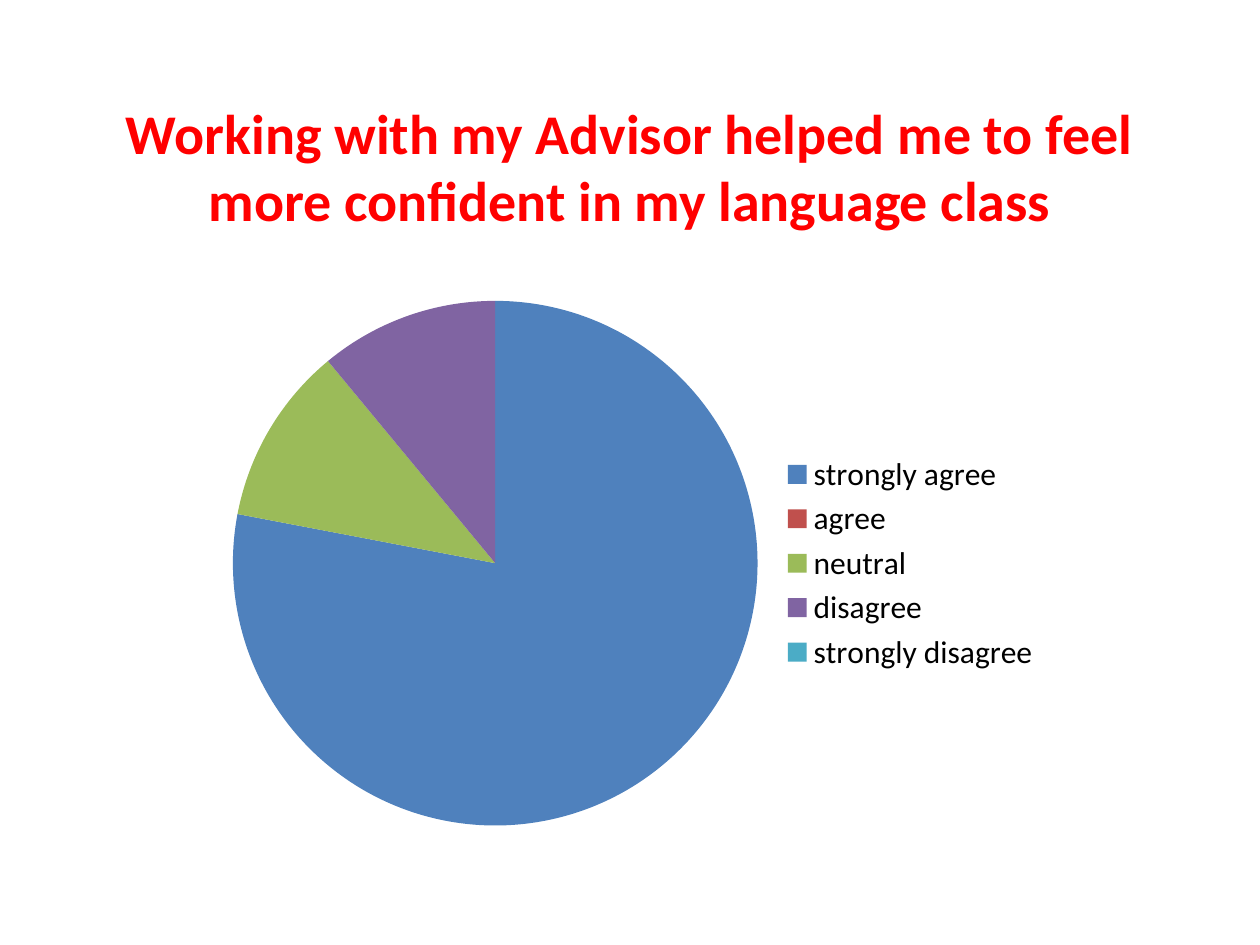
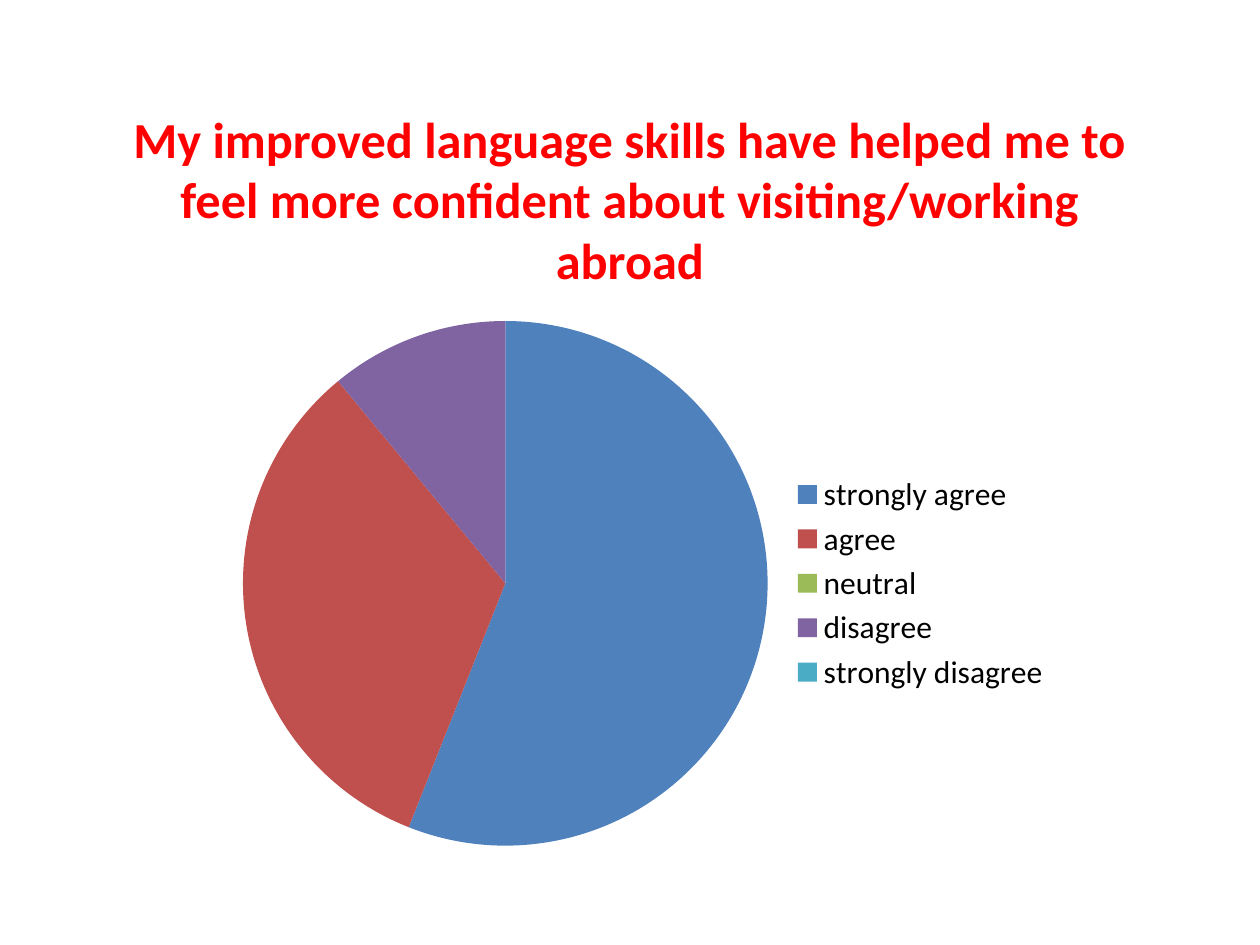
from dataclasses import dataclass

import pptx
import pptx.chart.data
import pptx.dml.color
import pptx.enum.chart
import pptx.enum.text
import pptx.util


@dataclass(frozen=True)
class Theme:
    font: str = "Calibri"
    title_color: str = "FF0000"
    text_color: str = "000000"
    background: str = "FFFFFF"
    slices: tuple = ("4F81BD", "C0504D", "9BBB59", "8064A2", "4BACC6")
    legend_size: float = 18


@dataclass(frozen=True)
class Box:
    """A region in inches."""
    left: float
    top: float
    width: float
    height: float

    def share(self, left, top, width, height):
        """Return the region covering the given shares of this one."""
        return Box(self.left + left * self.width, self.top + top * self.height,
                   width * self.width, height * self.height)

    def lengths(self):
        return [pptx.util.Inches(length) for length in
                (self.left, self.top, self.width, self.height)]


THEME = Theme()
PAGE = Box(0, 0, 10, 7.5)
ANSWERS = ("strongly agree", "agree", "neutral", "disagree", "strongly disagree")
QUESTIONS = (
    dict(question="Working with my Advisor helped me to feel more confident "
                  "in my language class",
         size=32, values=(78, 0, 11, 11, 0),
         title_box=PAGE.share(0.075, 0.08, 0.85, 0.19),
         chart_corner=(1.69, 2.25)),
    dict(question="My improved language skills have helped me to feel more "
                  "confident about visiting/working abroad",
         size=28.8, values=(56, 33, 0, 11, 0),
         title_box=PAGE.share(0.075, 0.11, 0.85, 0.2),
         chart_corner=(1.77, 2.41)),
)
CHART_SIZE = (6.67, 4.44)


def rgb(code):
    return pptx.dml.color.RGBColor.from_string(code)


def style_font(font, size, color, bold=False):
    font.name = THEME.font
    font.size = pptx.util.Pt(size)
    font.bold = bold
    font.color.rgb = rgb(color)


def place_title(page, box, question, size):
    title = page.shapes.title
    title.left, title.top, title.width, title.height = box.lengths()
    frame = title.text_frame
    frame.word_wrap = True
    frame.auto_size = pptx.enum.text.MSO_AUTO_SIZE.NONE
    frame.vertical_anchor = pptx.enum.text.MSO_ANCHOR.MIDDLE
    para = frame.paragraphs[0]
    para.alignment = pptx.enum.text.PP_ALIGN.CENTER
    span = para.add_run()
    span.text = question
    style_font(span.font, size, THEME.title_color, bold=True)


def place_pie(page, box, values):
    answers = pptx.chart.data.CategoryChartData()
    answers.categories = ANSWERS
    answers.add_series("Series 1", values)
    chart = page.shapes.add_chart(
        pptx.enum.chart.XL_CHART_TYPE.PIE, *box.lengths(), answers).chart
    style_font(chart.font, THEME.legend_size, THEME.text_color)
    chart.has_title = False
    chart.has_legend = True
    chart.legend.position = pptx.enum.chart.XL_LEGEND_POSITION.RIGHT
    chart.legend.include_in_layout = False
    plot = chart.plots[0]
    plot.vary_by_categories = True
    for index, color in enumerate(THEME.slices):
        fill = plot.series[0].points[index].format.fill
        fill.solid()
        fill.fore_color.rgb = rgb(color)


def add_question_page(deck, question, size, values, title_box, chart_corner):
    page = deck.slides.add_slide(deck.slide_layouts.get_by_name("Title Only"))
    page.background.fill.solid()
    page.background.fill.fore_color.rgb = rgb(THEME.background)
    place_title(page, title_box, question, size)
    place_pie(page, Box(*chart_corner, *CHART_SIZE), values)


def main():
    deck = pptx.Presentation()
    deck.slide_width = pptx.util.Inches(PAGE.width)
    deck.slide_height = pptx.util.Inches(PAGE.height)
    for question in QUESTIONS:
        add_question_page(deck, **question)
    deck.save("out.pptx")


if __name__ == "__main__":
    main()
